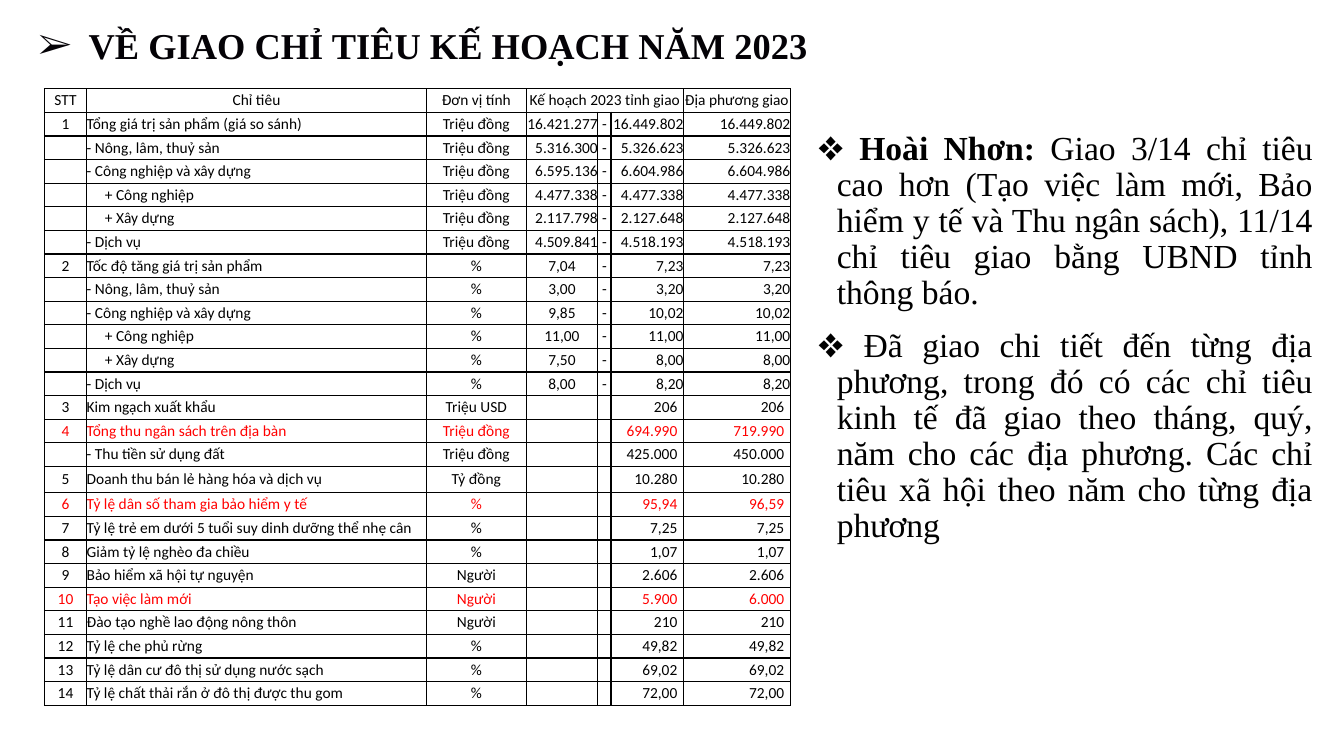
import pptx
import pptx.dml.color
import pptx.enum.text
import pptx.oxml
import pptx.oxml.ns
import pptx.util
from dataclasses import dataclass

Inches = pptx.util.Inches
Pt = pptx.util.Pt
ALIGN = pptx.enum.text.PP_ALIGN
MIDDLE = pptx.enum.text.MSO_ANCHOR.MIDDLE

HEADING = "VỀ GIAO CHỈ TIÊU KẾ HOẠCH NĂM 2023"
# Each remark is a list of (text, bold) runs.
REMARKS = [
    [(" Hoài Nhơn: ", True),
     ("Giao 3/14 chỉ tiêu cao hơn (Tạo việc làm mới, Bảo hiểm y tế và Thu ngân sách), "
      "11/14 chỉ tiêu giao bằng UBND tỉnh thông báo.", False)],
    [(" Đã giao chi tiết đến từng địa phương, trong đó có các chỉ tiêu kinh tế đã giao "
      "theo tháng, quý, năm cho các địa phương. Các chỉ tiêu xã hội theo năm cho từng "
      "địa phương", False)],
]
HEADERS = ["STT", "Chỉ tiêu", "Đơn vị tính", "Kế hoạch 2023 tỉnh giao", "", "", "Địa phương giao"]
MONEY = "Triệu đồng"
# Number, indicator, unit, lower target, upper target, local target
INDICATORS = [
    ("1", "Tổng giá trị sản phẩm (giá so sánh)", MONEY, "16.421.277", "16.449.802", "16.449.802"),
    ("", "- Nông, lâm, thuỷ sản", MONEY, "5.316.300", "5.326.623", "5.326.623"),
    ("", "- Công nghiệp và xây dựng", MONEY, "6.595.136", "6.604.986", "6.604.986"),
    ("", "+ Công nghiệp", MONEY, "4.477.338", "4.477.338", "4.477.338"),
    ("", "+ Xây dựng", MONEY, "2.117.798", "2.127.648", "2.127.648"),
    ("", "- Dịch vụ", MONEY, "4.509.841", "4.518.193", "4.518.193"),
    ("2", "Tốc độ tăng giá trị sản phẩm", "%", "7,04", "7,23", "7,23"),
    ("", "- Nông, lâm, thuỷ sản", "%", "3,00", "3,20", "3,20"),
    ("", "- Công nghiệp và xây dựng", "%", "9,85", "10,02", "10,02"),
    ("", "+ Công nghiệp", "%", "11,00", "11,00", "11,00"),
    ("", "+ Xây dựng", "%", "7,50", "8,00", "8,00"),
    ("", "- Dịch vụ", "%", "8,00", "8,20", "8,20"),
    ("3", "Kim ngạch xuất khẩu", "Triệu USD", "", "206", "206"),
    ("4", "Tổng thu ngân sách trên địa bàn", MONEY, "", "694.990", "719.990"),
    ("", "- Thu tiền sử dụng đất", MONEY, "", "425.000", "450.000"),
    ("5", "Doanh thu bán lẻ hàng hóa và dịch vụ", "Tỷ đồng", "", "10.280", "10.280"),
    ("6", "Tỷ lệ dân số tham gia bảo hiểm y tế", "%", "", "95,94", "96,59"),
    ("7", "Tỷ lệ trẻ em dưới 5 tuổi suy dinh dưỡng thể nhẹ cân", "%", "", "7,25", "7,25"),
    ("8", "Giảm tỷ lệ nghèo đa chiều", "%", "", "1,07", "1,07"),
    ("9", "Bảo hiểm xã hội tự nguyện", "Người", "", "2.606", "2.606"),
    ("10", "Tạo việc làm mới", "Người", "", "5.900", "6.000"),
    ("11", "Đào tạo nghề lao động nông thôn", "Người", "", "210", "210"),
    ("12", "Tỷ lệ che phủ rừng", "%", "", "49,82", "49,82"),
    ("13", "Tỷ lệ dân cư đô thị sử dụng nước sạch", "%", "", "69,02", "69,02"),
    ("14", "Tỷ lệ chất thải rắn ở đô thị được thu gom", "%", "", "72,00", "72,00"),
]
RAISED = {"4", "6", "10"}
COLUMN_WIDTHS = [0.42, 3.37, 0.99, 0.71, 0.13, 0.72, 1.06]
TABLE_HEIGHT, RETAIL_ROW, RETAIL_HEIGHT = 6.12, 16, 0.26


@dataclass(frozen=True)
class Theme:
    serif: str = "Times New Roman"
    sans: str = "Calibri"
    heading: str = "040206"
    ink: str = "000000"
    raised: str = "FF0000"
    heading_size: int = 26
    remark_size: int = 24
    cell_size: int = 11


THEME = Theme()


def style(run, face, size, color, bold=False):
    run.font.name = face
    run.font.size = Pt(size)
    run.font.bold = bold
    run.font.color.rgb = pptx.dml.color.RGBColor.from_string(color)


def add_element(parent, xml):
    namespace = pptx.oxml.ns.nsdecls("a")
    parent.append(pptx.oxml.parse_xml(xml.replace("/>", f" {namespace}/>", 1)
                                      if xml.count("<") == 1
                                      else xml.replace(">", f" {namespace}>", 1)))


def add_bullet(paragraph, symbol, indent):
    """Give the paragraph a bullet that hangs by indent inches."""
    properties = paragraph._p.get_or_add_pPr()
    properties.set("marL", str(Inches(indent)))
    properties.set("indent", str(-Inches(indent)))
    add_element(properties, f'<a:buFont typeface="{THEME.serif}"/>')
    add_element(properties, f'<a:buChar char="{symbol}"/>')


def add_plain_table(slide, rows, columns, left, top, width, height):
    table = slide.shapes.add_table(rows, columns, Inches(left), Inches(top),
                                   Inches(width), Inches(height)).table
    table.first_row = table.horz_banding = False
    return table


def add_borders(cell):
    for side in ("lnL", "lnR", "lnT", "lnB"):
        add_element(cell._tc.get_or_add_tcPr(),
                    f'<a:{side} w="12700"><a:solidFill><a:srgbClr val="{THEME.ink}"/>'
                    f'</a:solidFill></a:{side}>')


def fill_cell(cell, text, align, color, left=0, right=0):
    add_borders(cell)
    cell.fill.background()
    cell.vertical_anchor = MIDDLE
    cell.margin_top = cell.margin_bottom = 0
    cell.margin_left, cell.margin_right = Inches(left), Inches(right)
    cell.text_frame.text = text
    paragraph = cell.text_frame.paragraphs[0]
    paragraph.alignment = align
    for run in paragraph.runs:
        style(run, THEME.sans, THEME.cell_size, color)
    if not text:  # keeps empty cells from stretching their row
        add_element(paragraph._p, f'<a:endParaRPr sz="{THEME.cell_size * 100}"/>')


def add_heading(slide):
    title = slide.shapes.title
    title.left, title.top, title.width, title.height = map(Inches, (0.28, 0.18, 12.78, 0.54))
    title.text_frame.text = HEADING
    title.text_frame.auto_size = pptx.enum.text.MSO_AUTO_SIZE.SHAPE_TO_FIT_TEXT
    paragraph = title.text_frame.paragraphs[0]
    paragraph.alignment = ALIGN.LEFT
    add_bullet(paragraph, "➢", 0.5)
    style(paragraph.runs[0], THEME.serif, THEME.heading_size, THEME.heading, True)


def add_remarks(slide):
    cell = add_plain_table(slide, 1, 1, 8.01, 1.02, 5.11, 4.67).cell(0, 0)
    cell.fill.background()
    cell.vertical_anchor = MIDDLE
    for index, remark in enumerate(REMARKS):
        frame = cell.text_frame
        paragraph = frame.add_paragraph() if index else frame.paragraphs[0]
        add_bullet(paragraph, "❖", 0.19)
        paragraph.alignment = ALIGN.JUSTIFY
        paragraph.line_spacing = 0.97
        paragraph.space_after = Pt(12)
        for text, bold in remark:
            run = paragraph.add_run()
            run.text = text
            style(run, THEME.serif, THEME.remark_size, THEME.ink, bold)


def add_indicators(slide):
    row_count = len(INDICATORS) + 1
    table = add_plain_table(slide, row_count, len(HEADERS), 0.44, 0.88,
                            sum(COLUMN_WIDTHS), TABLE_HEIGHT)
    for column, width in zip(table.columns, COLUMN_WIDTHS):
        column.width = Inches(width)
    usual_height = (TABLE_HEIGHT - RETAIL_HEIGHT) / (row_count - 1)
    for index, row in enumerate(table.rows):
        row.height = Inches(RETAIL_HEIGHT if index == RETAIL_ROW else usual_height)

    for column, header in enumerate(HEADERS):
        fill_cell(table.cell(0, column), header, ALIGN.CENTER, THEME.ink)
    table.cell(0, 3).merge(table.cell(0, 5))

    for row, (number, name, unit, lower, upper, local) in enumerate(INDICATORS, 1):
        color = THEME.raised if number in RAISED else THEME.ink
        inset = 0 if lower else 0.06
        cells = [
            (number, ALIGN.CENTER, 0, 0),
            (name, ALIGN.LEFT, 0.18 if name.startswith("+") else 0, 0),
            (unit, ALIGN.CENTER, 0, 0),
            (lower, ALIGN.RIGHT if unit == MONEY else ALIGN.CENTER, 0, 0),
            ("-" if lower else "", ALIGN.CENTER, 0, 0),
            (upper, ALIGN.RIGHT, 0, inset),
            (local, ALIGN.RIGHT, 0, inset),
        ]
        for column, (text, align, left, right) in enumerate(cells):
            fill_cell(table.cell(row, column), text, align, color, left, right)


def main():
    deck = pptx.Presentation()
    deck.slide_width, deck.slide_height = Inches(13.33), Inches(7.5)
    slide = deck.slides.add_slide(deck.slide_layouts[5])
    add_heading(slide)
    add_remarks(slide)
    add_indicators(slide)
    deck.save("out.pptx")


if __name__ == "__main__":
    main()
